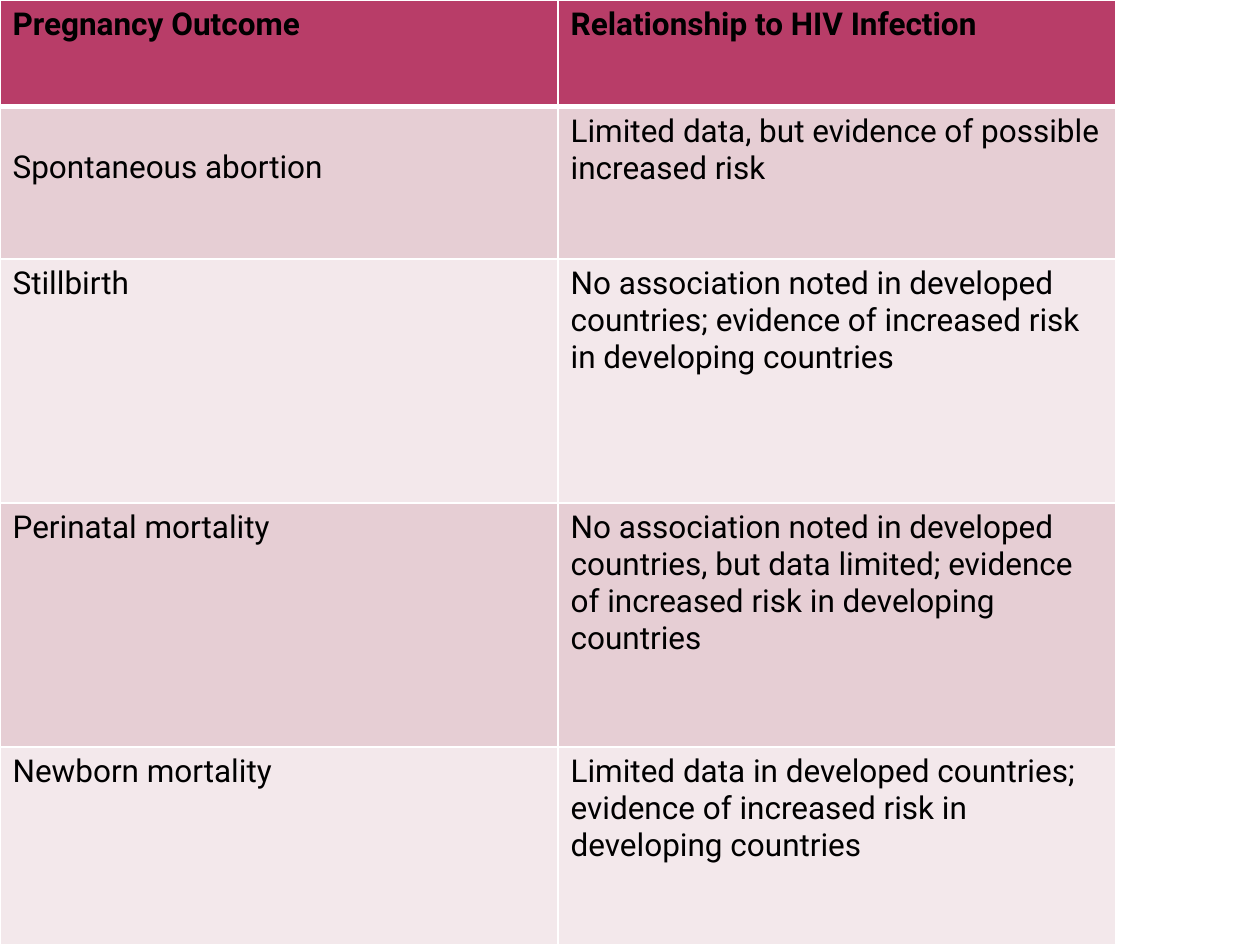
from lxml import etree
from pptx import Presentation
from pptx.dml.color import RGBColor
from pptx.oxml import ns
from pptx.util import Cm, Pt

COLORS = {
    "header": "B83D68",
    "odd_row": "E6CED4",
    "even_row": "F3E8EB",
    "border": "FFFFFF",
    "text": "000000",
}
FONT = "Roboto"
COLUMN_WIDTH = 11.25
ROW_HEIGHTS = [2.15, 3.07, 4.92, 4.92, 3.99]
OUTCOMES = [
    ("Pregnancy Outcome", "Relationship to HIV Infection"),
    ("Spontaneous abortion",
     "Limited data, but evidence of possible increased risk"),
    ("Stillbirth",
     "No association noted in developed countries; "
     "evidence of increased risk in developing countries"),
    ("Perinatal mortality",
     "No association noted in developed countries, but data limited; "
     "evidence of increased risk in developing countries"),
    ("Newborn mortality",
     "Limited data in developed countries; "
     "evidence of increased risk in developing countries"),
]


def set_borders(cell, widths):
    properties = cell._tc.get_or_add_tcPr()
    for position, (side, width) in enumerate(widths.items()):
        line = etree.Element(ns.qn(f"a:ln{side}"), w=str(Pt(width)))
        fill = etree.SubElement(line, ns.qn("a:solidFill"))
        etree.SubElement(fill, ns.qn("a:srgbClr"), val=COLORS["border"])
        properties.insert(position, line)


def format_cell(cell, content, fill, bold):
    cell.fill.solid()
    cell.fill.fore_color.rgb = RGBColor.from_string(COLORS[fill])
    para = cell.text_frame.paragraphs[0]
    para.text = content
    for span in para.runs:
        span.font.name = FONT
        span.font.size = Pt(18)
        span.font.bold = bold
        span.font.color.rgb = RGBColor.from_string(COLORS["text"])


def add_outcome_table(page):
    frame = page.shapes.add_table(
        len(OUTCOMES), 2, Cm(0), Cm(0),
        Cm(2 * COLUMN_WIDTH), Cm(sum(ROW_HEIGHTS)))
    table = frame.table
    for column in table.columns:
        column.width = Cm(COLUMN_WIDTH)
    for index, (height, contents) in enumerate(zip(ROW_HEIGHTS, OUTCOMES)):
        row = table.rows[index]
        row.height = Cm(height)
        if index == 0:
            fill = "header"
        else:
            fill = "odd_row" if index % 2 else "even_row"
        widths = {"L": 1, "R": 1,
                  "T": 3 if index == 1 else 1,
                  "B": 3 if index == 0 else 1}
        for cell, content in zip(row.cells, contents):
            format_cell(cell, content, fill, index == 0)
            set_borders(cell, widths)
    return table


def main():
    deck = Presentation()
    deck.slide_width = Cm(25.4)
    deck.slide_height = Cm(19.05)
    page = deck.slides.add_slide(deck.slide_layouts[6])
    table = add_outcome_table(page)
    table.cell(1, 0).margin_top = Cm(0.87)
    deck.save("out.pptx")


if __name__ == "__main__":
    main()
